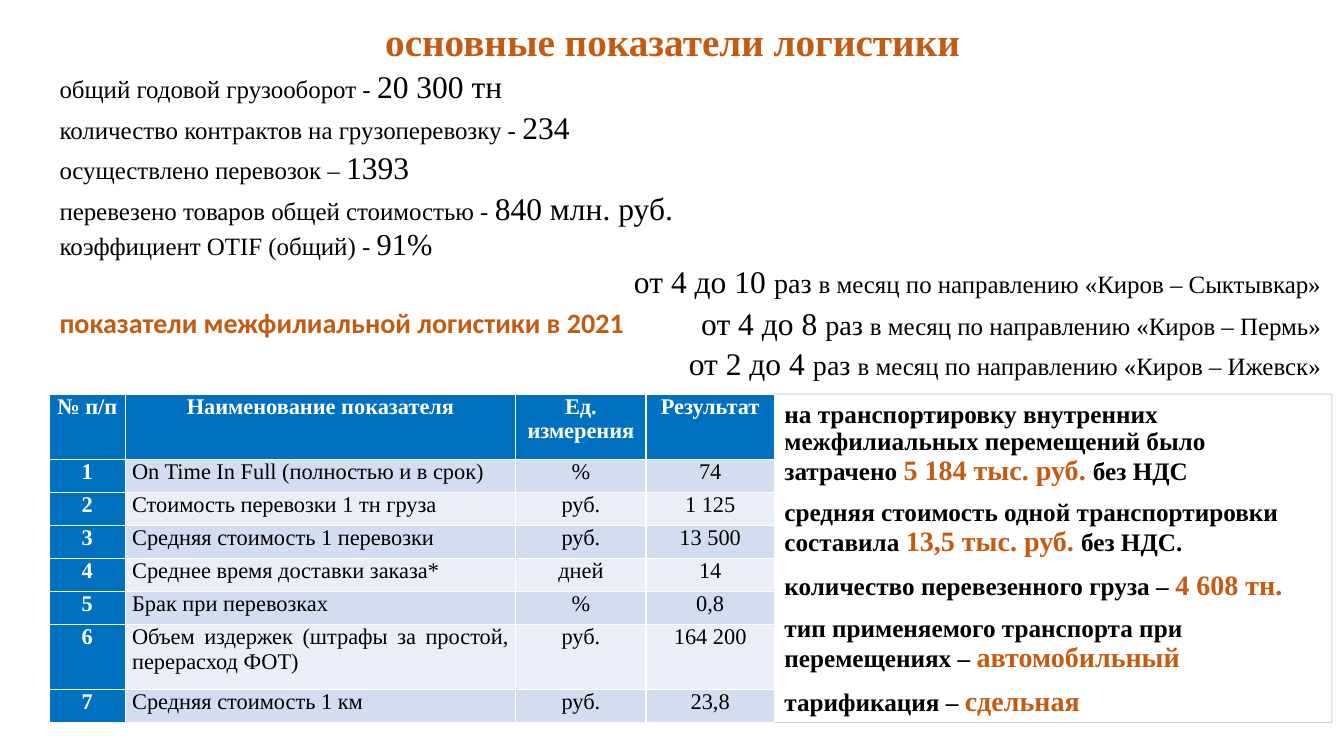
from lxml import etree
from pptx import Presentation
from pptx import util as u
from pptx.dml.color import RGBColor
from pptx.enum import text
from pptx.oxml import ns

COLORS = {"accent": "C55A11", "black": "000000", "white": "FFFFFF", "head": "0070C0",
          "odd": "D2DEEF", "even": "EAEFF7", "frame": "2F5597"}
SERIF = "Times New Roman"
LEFT, CENTER, RIGHT, JUSTIFY = (text.PP_ALIGN.LEFT, text.PP_ALIGN.CENTER,
                                text.PP_ALIGN.RIGHT, text.PP_ALIGN.JUSTIFY)
TOP, MIDDLE, BOTTOM = text.MSO_ANCHOR.TOP, text.MSO_ANCHOR.MIDDLE, text.MSO_ANCHOR.BOTTOM

WIDTH, HEIGHT = 13.33, 7.5
MARGIN, SPLIT, LOWER, LOWER_H = 0.49, 7.68, 3.91, 3.26

TOTALS = [
    ("общий годовой грузооборот - ", "20\u00a0300 тн"),
    ("количество контрактов на грузоперевозку - ", "234"),
    ("осуществлено перевозок – ", "1393"),
    ("перевезено товаров общей стоимостью - ", "840\u00a0млн. руб."),
    ("коэффициент OTIF (общий) - ", "91%"),
]
ROUTES = [("от 4 до 10 ", "Сыктывкар"), ("от 4 до 8 ", "Пермь"), ("от 2 до 4 ", "Ижевск")]
FACTS = [
    ("на транспортировку внутренних межфилиальных перемещений было затрачено ",
     "5\u00a0184 тыс. руб. ", "без НДС"),
    ("средняя стоимость одной транспортировки составила ", "13,5 тыс. руб. ", "без НДС."),
    ("количество перевезенного груза – ", "4\u00a0608 тн."),
    ("тип применяемого транспорта при перемещениях – ", "автомобильный"),
    ("тарификация – ", "сдельная"),
]
COLUMNS = [0.75, 3.87, 1.29, 1.27]
ROW_H, TALL_ROWS = 0.326, (0, 6)
ROWS = [
    ("№ п/п", "Наименование показателя", "Ед. измерения", "Результат"),
    ("1", "On Time In Full (полностью и в срок)", "%", "74"),
    ("2", "Стоимость перевозки 1 тн груза", "руб.", "1 125"),
    ("3", "Средняя стоимость 1 перевозки", "руб.", "13 500"),
    ("4", "Среднее время доставки заказа*", "дней", "14"),
    ("5", "Брак при перевозках", "%", "0,8"),
    ("6", "Объем издержек (штрафы за простой, перерасход ФОТ)", "руб.", "164 200"),
    ("7", "Средняя стоимость 1 км", "руб.", "23,8"),
]


def rgb(name):
    return RGBColor.from_string(COLORS[name])


def add_run(p, words, size, color="black", bold=False, font=SERIF):
    r = p.add_run()
    r.text = words
    r.font.size, r.font.name, r.font.bold = u.Pt(size), font, bold
    r.font.color.rgb = rgb(color)


def place(sp, box, anchor=TOP):
    """Move a placeholder to the box and return its text frame."""
    sp.left, sp.top, sp.width, sp.height = map(u.Inches, box)
    tf = sp.text_frame
    tf.word_wrap = True
    tf.auto_size = text.MSO_AUTO_SIZE.NONE
    tf.vertical_anchor = anchor
    return tf


def add_paragraph(tf, align=LEFT, spacing=0.9, before=10):
    """Return a plain paragraph without bullet, reusing the empty first one."""
    first = tf.paragraphs[0]
    p = tf.add_paragraph() if first.runs else first
    p.alignment, p.line_spacing = align, spacing
    p.space_before, p.space_after = u.Pt(before), u.Pt(0)
    pPr = p._p.get_or_add_pPr()
    pPr.set("marL", "0")
    pPr.set("indent", "0")
    etree.SubElement(pPr, ns.qn("a:buNone"))
    return p


def fill_title(sp, box):
    p = add_paragraph(place(sp, box, MIDDLE), CENTER, before=0)
    add_run(p, "основные показатели логистики", 28, "accent", True)


def fill_totals(sp, box):
    tf = place(sp, box)
    tight, loose = {"spacing": 0.7}, {"spacing": 1.0, "before": 0}
    for label, value in TOTALS:
        last = label == TOTALS[-1][0]
        p = add_paragraph(tf, **(loose if last else tight))
        add_run(p, label, 17.8)
        add_run(p, value, 21.7 if last else 22.5)
    for i, (times, city) in enumerate(ROUTES):
        p = add_paragraph(tf, RIGHT, **(tight if i else loose))
        add_run(p, times, 22.5)
        add_run(p, "раз ", 20.1)
        add_run(p, f"в месяц по направлению «Киров – {city}»", 17.8)


def fill_facts(sp, box):
    tf = place(sp, box, BOTTOM)
    sp.line.width = u.Pt(0.75)
    sp.line.color.rgb = rgb("frame")
    color = sp.line._ln.find(".//" + ns.qn("a:srgbClr"))
    etree.SubElement(color, ns.qn("a:alpha")).set("val", "25000")
    for fact in FACTS:
        p = add_paragraph(tf)
        for i, words in enumerate(fact):
            size, color = (20, "accent") if i == 1 else (18, "black")
            add_run(p, words, size, color, True)


def fill_caption(sp, box):
    p = add_paragraph(place(sp, box))
    add_run(p, "показатели межфилиальной логистики в 2021", 20, "accent", True, "Calibri")


def add_indicators(slide, box):
    table = slide.shapes.add_table(len(ROWS), len(COLUMNS), *map(u.Inches, box)).table
    for column, share in zip(table.columns, COLUMNS):
        column.width = u.Inches(box[2] * share / sum(COLUMNS))
    for i, values in enumerate(ROWS):
        table.rows[i].height = u.Inches(ROW_H * (2 if i in TALL_ROWS else 1))
        for j, value in enumerate(values):
            cell = table.cell(i, j)
            head = i == 0 or j == 0
            cell.fill.solid()
            cell.fill.fore_color.rgb = rgb("head" if head else "odd" if i % 2 else "even")
            cell.margin_left = cell.margin_right = u.Inches(0.07)
            cell.margin_top = cell.margin_bottom = 0
            p = cell.text_frame.paragraphs[0]
            p.alignment = JUSTIFY if j == 1 and i else CENTER
            add_run(p, value, 16, "white" if head else "black", head)


def add_logistics_slide(prs):
    slide = prs.slides.add_slide(prs.slide_layouts.get_by_name("Comparison"))
    title, totals, facts, caption, spare = slide.placeholders
    spare.element.getparent().remove(spare.element)
    fill_title(title, (0.92, 0.15, 11.5, 0.57))
    fill_totals(totals, (MARGIN, 0.72, 12.71, 3.2))
    fill_facts(facts, (SPLIT, LOWER, 5.53, LOWER_H))
    add_indicators(slide, (MARGIN, LOWER, SPLIT - MARGIN, LOWER_H))
    fill_caption(caption, (MARGIN, 3.02, 5.91, 0.51))


def main():
    prs = Presentation()
    prs.slide_width, prs.slide_height = u.Inches(WIDTH), u.Inches(HEIGHT)
    add_logistics_slide(prs)
    prs.save("out.pptx")


if __name__ == "__main__":
    main()
